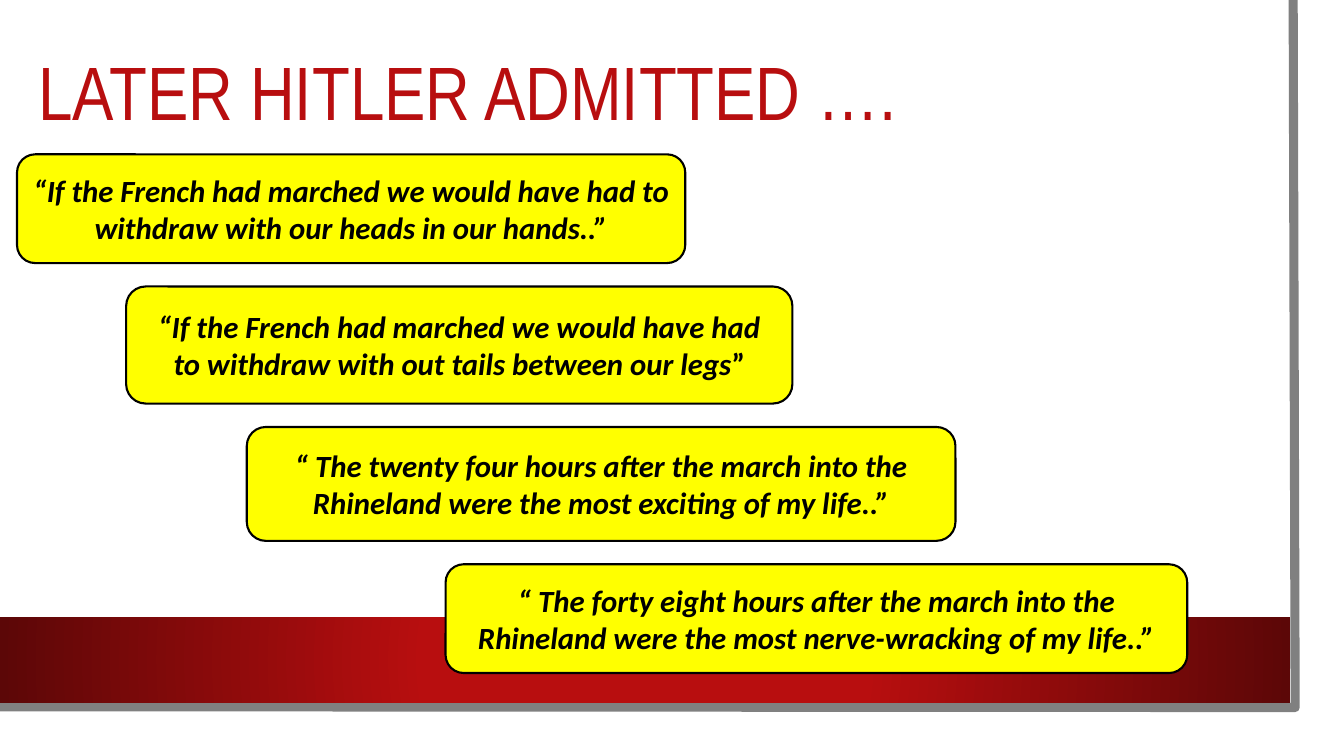
from dataclasses import dataclass

from lxml.etree import SubElement
from pptx import Presentation
from pptx.dml.color import RGBColor
from pptx.enum.shapes import MSO_SHAPE
from pptx.enum.text import MSO_ANCHOR, PP_ALIGN
from pptx.oxml.ns import qn
from pptx.shapes.autoshape import Shape
from pptx.slide import Slide
from pptx.text.text import TextFrame, _Paragraph
from pptx.util import Cm, Pt


@dataclass(frozen=True)
class Theme:
    paper: RGBColor = RGBColor(0xFF, 0xFF, 0xFF)
    frame: RGBColor = RGBColor(0x80, 0x80, 0x80)
    red: RGBColor = RGBColor(0xB8, 0x0E, 0x0F)
    dark_red: RGBColor = RGBColor(0x5C, 0x07, 0x07)
    yellow: RGBColor = RGBColor(0xFF, 0xFF, 0x00)
    ink: RGBColor = RGBColor(0, 0, 0)
    frame_width: Pt = Pt(6.5)
    quote_border: Pt = Pt(1.5)


THEME = Theme()
HEADING_FONT = {"name": "Arial Narrow", "size": Pt(54)}
QUOTE_FONT = {"name": "Calibri", "size": Pt(22), "bold": True, "italic": True}
UPRIGHT_FONT = QUOTE_FONT | {"italic": False}


@dataclass(frozen=True)
class Quote:
    """A statement with its place across the slide, in centimetres."""
    left: float
    width: float
    height: float
    words: str
    upright_ending: str = ""


QUOTES = [
    Quote(0.43, 16.84, 2.74, "“If the French had marched we would have had to "
          "withdraw with our heads in our hands..”"),
    Quote(3.18, 16.79, 2.95, "“If the French had marched we would have had to "
          "withdraw with out tails between our legs", "”"),
    Quote(6.22, 17.86, 2.87, "“ The twenty four hours after the march into the "
          "Rhineland were the most exciting of my life..”"),
    Quote(11.23, 18.69, 2.74, "“ The forty eight hours after the march into the "
          "Rhineland were the most nerve-wracking of my life..”"),
]
FIRST_QUOTE_TOP = 3.89
QUOTE_GAP = 0.59


def add_words(paragraph: _Paragraph, words: str, font: dict, color: RGBColor) -> None:
    run = paragraph.add_run()
    run.text = words
    for attribute, value in font.items():
        setattr(run.font, attribute, value)
    run.font.color.rgb = color


def prepare(frame: TextFrame) -> _Paragraph:
    for attribute, value in {"word_wrap": True,
                             "vertical_anchor": MSO_ANCHOR.MIDDLE}.items():
        setattr(frame, attribute, value)
    return frame.paragraphs[0]


def add_block(slide: Slide, kind: MSO_SHAPE, left: float, top: float,
              width: float, height: float) -> Shape:
    block = slide.shapes.add_shape(kind, Cm(left), Cm(top), Cm(width), Cm(height))
    block.shadow.inherit = False
    block.line.fill.background()
    return block


def add_backdrop(slide: Slide) -> None:
    # White sheet
    sheet = add_block(slide, MSO_SHAPE.RECTANGLE, 0, 0, 33.27, 18.47)
    sheet.fill.solid()
    sheet.fill.fore_color.rgb = THEME.paper

    # Grey edge along the right and bottom
    outline = slide.shapes.build_freeform(Cm(32.59), Cm(0))
    outline.add_line_segments([(Cm(32.64), Cm(17.83)), (Cm(-0.08), Cm(17.81))],
                              close=False)
    edge = outline.convert_to_shape()
    edge.shadow.inherit = False
    edge.fill.background()
    edge.line.color.rgb = THEME.frame
    edge.line.width = THEME.frame_width

    # Red band, glowing from its centre
    band = add_block(slide, MSO_SHAPE.RECTANGLE, 0, 15.55, 32.51, 2.16)
    band.fill.gradient()
    glow = [(0.34, THEME.red), (1.0, THEME.dark_red)]
    for stop, (position, color) in zip(band.fill.gradient_stops, glow):
        stop.position = position
        stop.color.rgb = color
    gradient = band.element.spPr.find(qn("a:gradFill"))
    gradient.remove(gradient.find(qn("a:lin")))
    circle = SubElement(gradient, qn("a:path"), {"path": "circle"})
    SubElement(circle, qn("a:fillToRect"), dict.fromkeys("ltrb", "50000"))


def add_heading(slide: Slide, words: str) -> None:
    heading = slide.shapes.add_textbox(Cm(0.71), Cm(0.81), Cm(31.19), Cm(3.2))
    paragraph = prepare(heading.text_frame)
    paragraph.line_spacing = 0.9
    add_words(paragraph, words, HEADING_FONT, THEME.red)


def add_quote(slide: Slide, quote: Quote, top: float) -> None:
    bubble = add_block(slide, MSO_SHAPE.ROUNDED_RECTANGLE,
                       quote.left, top, quote.width, quote.height)
    bubble.fill.solid()
    bubble.fill.fore_color.rgb = THEME.yellow
    bubble.line.color.rgb = THEME.ink
    bubble.line.width = THEME.quote_border
    paragraph = prepare(bubble.text_frame)
    paragraph.alignment = PP_ALIGN.CENTER
    add_words(paragraph, quote.words, QUOTE_FONT, THEME.ink)
    if quote.upright_ending:
        add_words(paragraph, quote.upright_ending, UPRIGHT_FONT, THEME.ink)


def main() -> None:
    deck = Presentation()
    deck.slide_width, deck.slide_height = Cm(33.87), Cm(19.05)
    slide = deck.slides.add_slide(deck.slide_layouts[6])

    add_backdrop(slide)
    add_heading(slide, "LATER HITLER ADMITTED ….")

    # Quotes step down the slide with an equal gap
    top = FIRST_QUOTE_TOP
    for quote in QUOTES:
        add_quote(slide, quote, top)
        top += quote.height + QUOTE_GAP

    deck.save("out.pptx")


if __name__ == "__main__":
    main()
